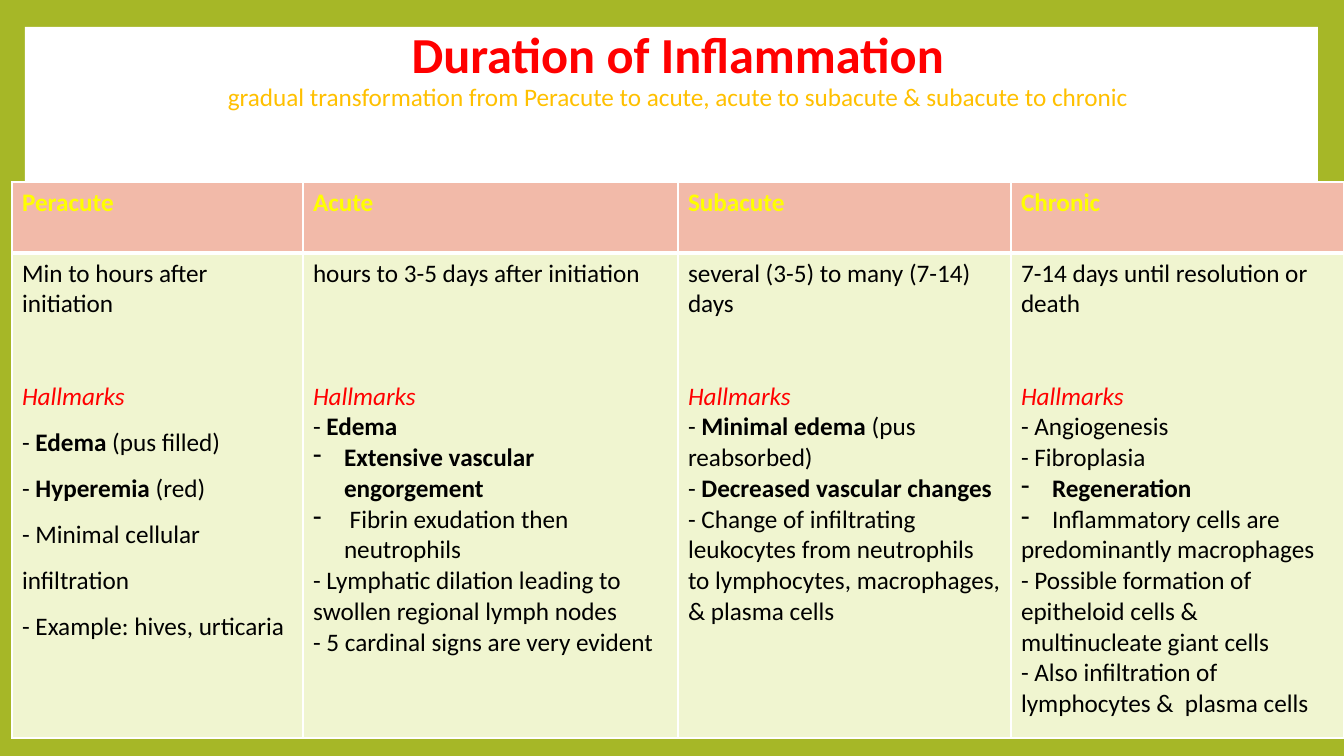
import pptx
import pptx.dml.color
import pptx.enum.text
import pptx.oxml
import pptx.oxml.ns
import pptx.util

SLIDE_SIZE = (1344, 756)
PANEL = (25, 27, 1293, 703)
TITLE_BOX = (98, 30, 1160, 85)
TABLE_CORNER = (12, 182)
COLUMN_WIDTHS = (291, 375, 333, 333)
ROW_HEIGHTS = (71, 485)
BULLET_INDENT = 31

TITLE = "Duration of Inflammation"
SUBTITLE = "gradual transformation from Peracute to acute, acute to subacute & subacute to chronic"
HALLMARKS = "Hallmarks"

STAGES = [
    {
        "name": "Peracute",
        "time": "Min to hours after initiation",
        "gap_lines": 2,
        "line_spacing": 1.5,
        "signs": [
            "- **Edema **(pus filled)",
            "- **Hyperemia **(red)",
            "- Minimal cellular infiltration",
            "- Example: hives, urticaria",
        ],
    },
    {
        "name": "Acute",
        "time": "hours to 3-5 days after initiation",
        "gap_lines": 3,
        "line_spacing": 1.0,
        "signs": [
            "- **Edema**",
            ("-", "**Extensive vascular engorgement**"),
            ("-", " Fibrin exudation then neutrophils"),
            "- Lymphatic dilation leading to swollen regional lymph nodes",
            "- 5 cardinal signs are very evident",
        ],
    },
    {
        "name": "Subacute",
        "time": "several (3-5) to many (7-14) days",
        "gap_lines": 2,
        "line_spacing": 1.0,
        "signs": [
            "- **Minimal edema **(pus reabsorbed)",
            "- **Decreased vascular changes**",
            "- Change of infiltrating leukocytes from neutrophils to lymphocytes, macrophages, & plasma cells",
        ],
    },
    {
        "name": "Chronic",
        "time": "7-14 days until resolution or death",
        "gap_lines": 2,
        "line_spacing": 1.0,
        "signs": [
            "- Angiogenesis",
            "- Fibroplasia",
            ("-", "**Regeneration**"),
            ("-", "Inflammatory cells are"),
            "predominantly macrophages",
            "- Possible formation of epitheloid cells & multinucleate giant cells",
            "- Also infiltration of lymphocytes &  plasma cells",
        ],
    },
]

THEME = {
    "font": "Calibri",
    "title_size": 36,
    "body_size": 18,
    "line_height": 22,
    "background": "A6B727",
    "panel": "FFFFFF",
    "title": "FF0000",
    "subtitle": "FFC000",
    "header_text": "FFFF00",
    "header_fill": "F2BAA9",
    "body_text": "000000",
    "body_fill": "F0F5D0",
    "hallmarks": "FF0000",
    "border": "FFFFFF",
}


def px(length):
    return pptx.util.Emu(round(length * 914400 / 100.8))


def paint(fill, color):
    fill.solid()
    fill.fore_color.rgb = pptx.dml.color.RGBColor.from_string(THEME[color])


def style(run, color, size="body_size", bold=False, italic=False):
    run.font.name = THEME["font"]
    run.font.size = pptx.util.Pt(THEME[size])
    run.font.bold = bold
    run.font.italic = italic
    run.font.color.rgb = pptx.dml.color.RGBColor.from_string(THEME[color])


def write(paragraph, text, color, **options):
    paragraph.text = text
    style(paragraph.runs[0], color, **options)


def write_sign(paragraph, sign, line_spacing):
    bullet, text = sign if isinstance(sign, tuple) else (None, sign)
    paragraph.line_spacing = line_spacing
    if bullet:
        properties = paragraph._p.get_or_add_pPr()
        properties.set("marL", str(px(BULLET_INDENT)))
        properties.set("indent", str(-px(BULLET_INDENT)))
        character = pptx.oxml.parse_xml(
            f'<a:buChar {pptx.oxml.ns.nsdecls("a")} char="{bullet}"/>')
        properties.append(character)
    for position, part in enumerate(text.split("**")):
        if part:
            run = paragraph.add_run()
            run.text = part
            style(run, "body_text", bold=position % 2 == 1)


def add_borders(cell, top, bottom):
    properties = cell._tc.get_or_add_tcPr()
    sides = {"lnL": 1, "lnR": 1, "lnT": top, "lnB": bottom}
    for position, (side, width) in enumerate(sides.items()):
        properties.insert(position, pptx.oxml.parse_xml(
            f'<a:{side} {pptx.oxml.ns.nsdecls("a")} w="{pptx.util.Pt(width)}">'
            f'<a:solidFill><a:srgbClr val="{THEME["border"]}"/></a:solidFill></a:{side}>'))


def add_title(slide):
    frame = slide.shapes.add_textbox(*map(px, TITLE_BOX)).text_frame
    frame.word_wrap = True
    frame.margin_left = frame.margin_right = frame.margin_top = frame.margin_bottom = 0
    write(frame.paragraphs[0], TITLE, "title", size="title_size", bold=True)
    write(frame.add_paragraph(), SUBTITLE, "subtitle")
    for paragraph in frame.paragraphs:
        paragraph.alignment = pptx.enum.text.PP_ALIGN.CENTER
        paragraph.line_spacing = 0.9


def add_stage_table(slide):
    size = (sum(COLUMN_WIDTHS), sum(ROW_HEIGHTS))
    table = slide.shapes.add_table(
        len(ROW_HEIGHTS), len(STAGES), *map(px, TABLE_CORNER + size)).table
    for row, height in zip(table.rows, ROW_HEIGHTS):
        row.height = px(height)
    for index, (stage, width) in enumerate(zip(STAGES, COLUMN_WIDTHS)):
        table.columns[index].width = px(width)
        header, body = table.cell(0, index), table.cell(1, index)
        paint(header.fill, "header_fill")
        paint(body.fill, "body_fill")
        add_borders(header, 1, 3)
        add_borders(body, 3, 1)
        write(header.text_frame.paragraphs[0], stage["name"], "header_text", bold=True)
        frame = body.text_frame
        write(frame.paragraphs[0], stage["time"], "body_text")
        hallmarks = frame.add_paragraph()
        write(hallmarks, HALLMARKS, "hallmarks", italic=True)
        hallmarks.space_before = pptx.util.Pt(stage["gap_lines"] * THEME["line_height"])
        for sign in stage["signs"]:
            write_sign(frame.add_paragraph(), sign, stage["line_spacing"])


def main():
    presentation = pptx.Presentation()
    presentation.slide_width, presentation.slide_height = map(px, SLIDE_SIZE)
    slide = presentation.slides.add_slide(presentation.slide_layouts[6])
    paint(slide.background.fill, "background")
    panel = slide.shapes.add_shape(1, *map(px, PANEL))
    panel.shadow.inherit = False
    paint(panel.fill, "panel")
    panel.line.fill.background()
    add_title(slide)
    add_stage_table(slide)
    presentation.save("out.pptx")


if __name__ == "__main__":
    main()
